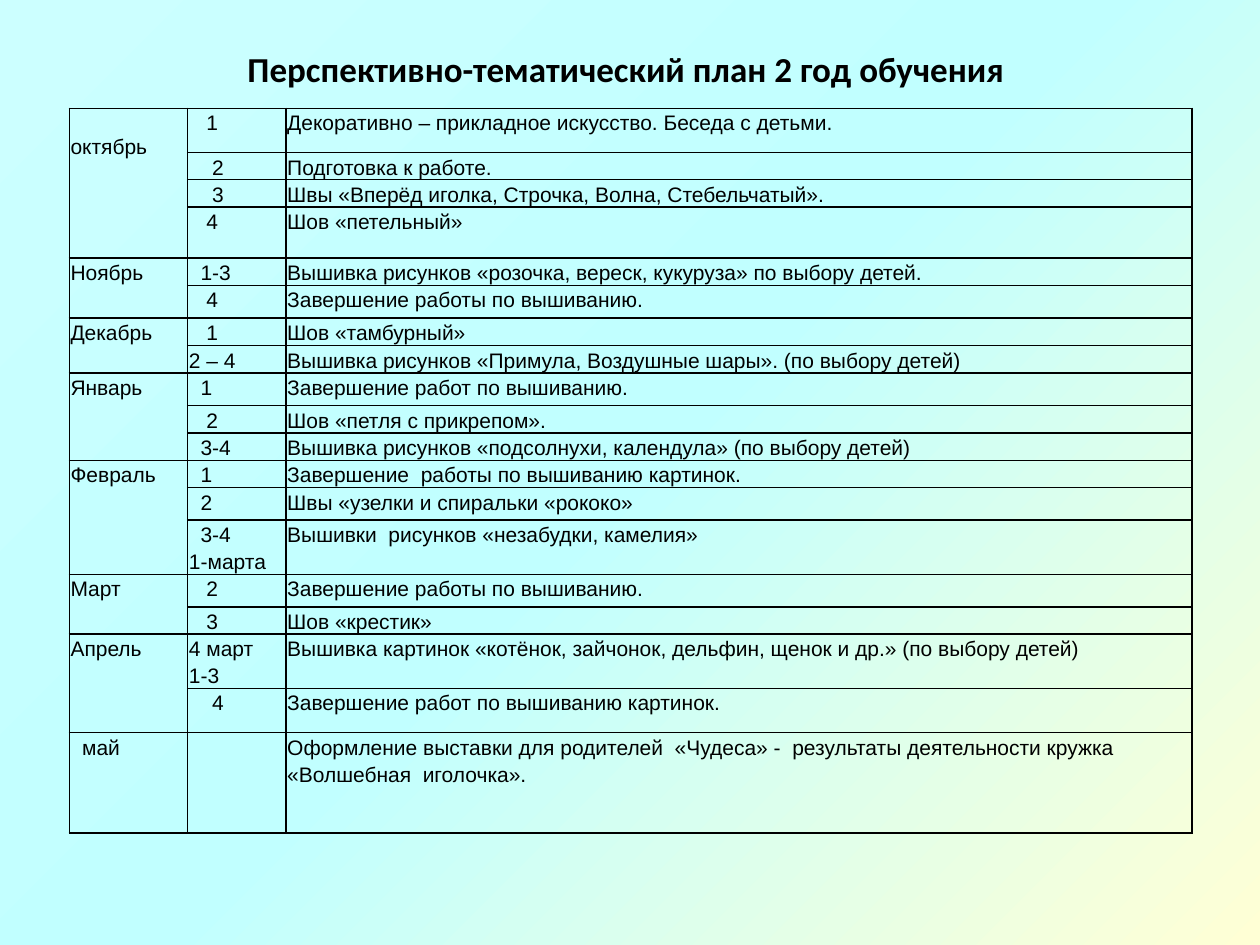
from dataclasses import dataclass

from lxml import etree
from pptx import Presentation
from pptx.dml.color import RGBColor
from pptx.enum.text import MSO_ANCHOR, PP_ALIGN
from pptx.oxml import parse_xml
from pptx.oxml.ns import qn
from pptx.util import Inches, Pt

CENTER = PP_ALIGN.CENTER
MIDDLE = MSO_ANCHOR.MIDDLE
TITLE_ONLY = 5
NS = 'xmlns:a="http://schemas.openxmlformats.org/drawingml/2006/main"'
NS_P = 'xmlns:p="http://schemas.openxmlformats.org/presentationml/2006/main"'


@dataclass(frozen=True)
class Theme:
    ink: str = "000000"
    gradient: tuple = ((0, "CCFFFF"), (50, "C1FFFF"), (100, "FFFFD5"))
    title_font: str = "Calibri"
    body_font: str = "Arial"
    title_size: int = 20
    body_size: int = 12
    line_spacing: float = 1.15
    border: int = 1


THEME = Theme()
TITLE = "Перспективно-тематический план 2 год обучения "
COLS = (0.94, 0.78, 7.19)
INDENT = 0.046

# month, month indent, top margin, lessons: height, indent, number, topic
PLAN = (
    ("октябрь", 0, 0.19, (
        (0.35, 3, "1", "Декоративно – прикладное искусство. Беседа с детьми."),
        (0.21, 4, "2", "Подготовка к работе."),
        (0.22, 4, "3", "Швы «Вперёд иголка, Строчка, Волна, Стебельчатый»."),
        (0.4, 3, "4", "Шов «петельный»"))),
    ("Ноябрь", 0, 0, (
        (0.21, 2, "1-3", "Вышивка рисунков «розочка, вереск, кукуруза» по выбору детей."),
        (0.26, 3, "4", "Завершение работы по вышиванию."))),
    ("Декабрь", 0, 0, (
        (0.22, 3, "1", "Шов «тамбурный»"),
        (0.21, 0, "2 – 4", "Вышивка рисунков «Примула, Воздушные шары». (по выбору детей)"))),
    ("Январь", 0, 0, (
        (0.26, 2, "1", "Завершение работ по вышиванию."),
        (0.22, 3, "2", "Шов «петля с прикрепом»."),
        (0.21, 2, "3-4", "Вышивка рисунков «подсолнухи, календула» (по выбору детей)"))),
    ("Февраль", 0, 0, (
        (0.21, 2, "1", "Завершение  работы по вышиванию картинок."),
        (0.26, 2, "2", "Швы «узелки и спиральки «рококо»"),
        (0.43, 2, "3-4\n1-марта", "Вышивки  рисунков «незабудки, камелия»"))),
    ("Март", 0, 0, (
        (0.26, 3, "2", "Завершение работы по вышиванию."),
        (0.21, 3, "3", "Шов «крестик»"))),
    ("Апрель", 0, 0, (
        (0.43, 0, "4 март\n1-3", "Вышивка картинок «котёнок, зайчонок, дельфин, щенок и др.» "
                                 "(по выбору детей)"),
        (0.35, 4, "4", "Завершение работ по вышиванию картинок."))),
    ("май", 2, 0, (
        (0.8, 0, "", "Оформление выставки для родителей  «Чудеса» -  результаты "
                     "деятельности кружка «Волшебная  иголочка»."),)),
)


def set_background(s):
    stops = "".join(f'<a:gs pos="{pos * 1000}"><a:srgbClr val="{color}"/></a:gs>'
                    for pos, color in THEME.gradient)
    bg = parse_xml(
        f'<p:bg {NS} {NS_P}><p:bgPr><a:gradFill rotWithShape="1"><a:gsLst>{stops}</a:gsLst>'
        '<a:path path="circle"><a:fillToRect r="100000" b="100000"/></a:path>'
        '</a:gradFill><a:effectLst/></p:bgPr></p:bg>')
    s.element.cSld.insert(0, bg)


def style_font(font, name, size, bold=False):
    font.name = name
    font.size = Pt(size)
    font.bold = bold
    font.color.rgb = RGBColor.from_string(THEME.ink)


def add_title(s):
    title = s.shapes.title
    title.left, title.top = Inches(0.5), Inches(0.3)
    title.width, title.height = Inches(9), Inches(0.48)
    tf = title.text_frame
    tf.text = TITLE
    tf.vertical_anchor = MIDDLE
    p = tf.paragraphs[0]
    p.alignment = CENTER
    style_font(p.runs[0].font, THEME.title_font, THEME.title_size, True)


def format_cell(cell):
    cell.margin_left = cell.margin_right = Inches(0.01)
    cell.margin_top = cell.margin_bottom = 0
    tcPr = cell._tc.get_or_add_tcPr()
    for side in ("lnL", "lnR", "lnT", "lnB"):
        ln = etree.SubElement(tcPr, qn(f"a:{side}"), w=str(Pt(THEME.border)))
        fill = etree.SubElement(ln, qn("a:solidFill"))
        etree.SubElement(fill, qn("a:srgbClr"), val=THEME.ink)
    cell.fill.background()


def write_cell(cell, text, indent=0, top=0):
    cell.margin_top = Inches(top)
    tf = cell.text_frame
    tf.text = text
    for p in tf.paragraphs:
        p.line_spacing = THEME.line_spacing
        for r in p.runs:
            style_font(r.font, THEME.body_font, THEME.body_size)
    if indent:
        pPr = tf.paragraphs[0]._p.get_or_add_pPr()
        pPr.set("marL", str(Inches(indent * INDENT)))


def add_plan(s):
    heights = [lesson[0] for month in PLAN for lesson in month[3]]
    frame = s.shapes.add_table(len(heights), len(COLS), Inches(0.55), Inches(0.86),
                               Inches(sum(COLS)), Inches(sum(heights)))
    table = frame.table
    table.first_row = table.horz_banding = False
    for col, width in zip(table.columns, COLS):
        col.width = Inches(width)
    for row, height in zip(table.rows, heights):
        row.height = Inches(height)
    for cell in table.iter_cells():
        format_cell(cell)
    row = 0
    for month, month_indent, top, lessons in PLAN:
        first = table.cell(row, 0)
        if len(lessons) > 1:
            first.merge(table.cell(row + len(lessons) - 1, 0))
        write_cell(first, month, month_indent, top)
        for _, indent, number, topic in lessons:
            write_cell(table.cell(row, 1), number, indent)
            write_cell(table.cell(row, 2), topic)
            row += 1


def main():
    prs = Presentation()
    prs.slide_width, prs.slide_height = Inches(10), Inches(7.5)
    s = prs.slides.add_slide(prs.slide_layouts[TITLE_ONLY])
    set_background(s)
    add_title(s)
    add_plan(s)
    prs.save("out.pptx")


if __name__ == "__main__":
    main()
